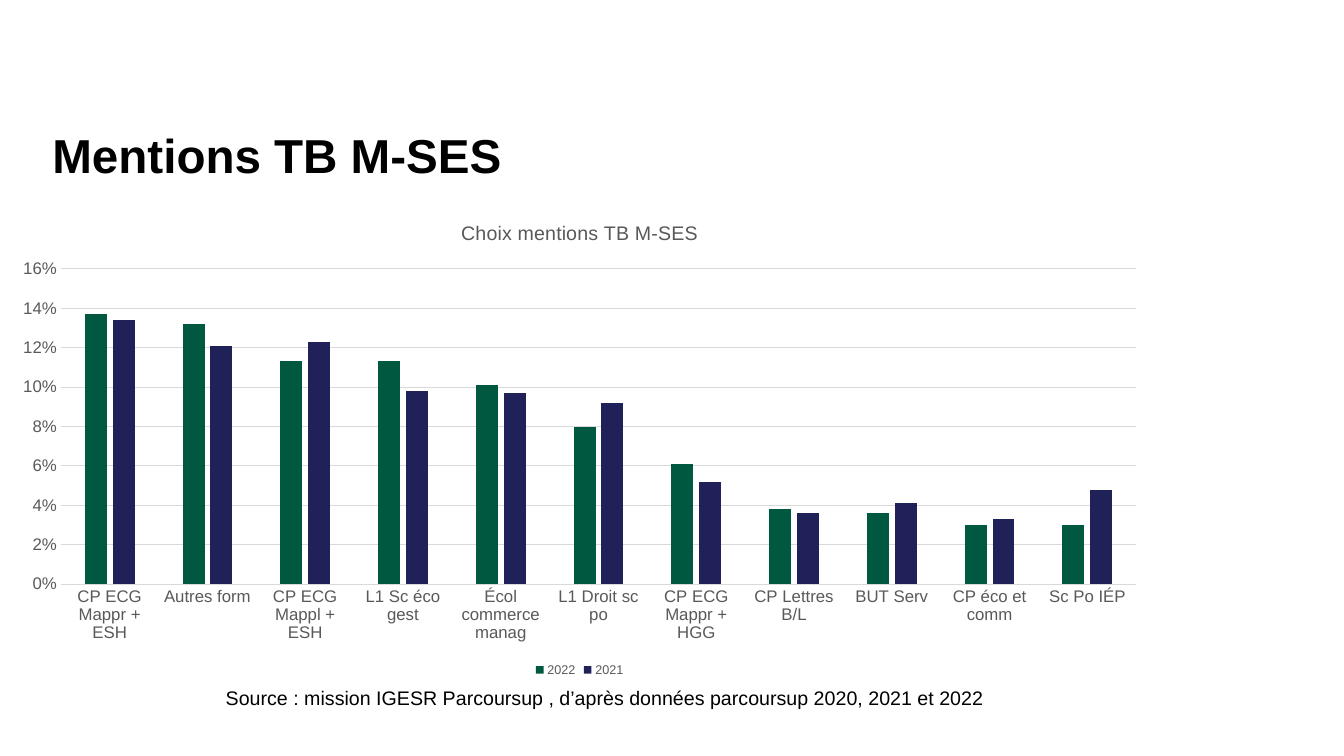
from dataclasses import dataclass

from pptx import Presentation
from pptx.chart.data import CategoryChartData
from pptx.dml.color import RGBColor
from pptx.enum.chart import XL_CHART_TYPE, XL_LEGEND_POSITION, XL_TICK_MARK
from pptx.util import Inches, Pt


@dataclass(frozen=True)
class Theme:
    """Colours, font and type sizes of the slide."""
    font: str = "Arial"
    ink: str = "000000"
    grey: str = "595959"
    rule: str = "D9D9D9"
    bars: tuple = ("005841", "21215A")
    title: int = 34
    body: int = 14
    axis: int = 12
    legend: int = 9


THEME = Theme()

CHOICES = [
    ("CP ECG Mappr + ESH", 0.137, 0.134),
    ("Autres form", 0.132, 0.121),
    ("CP ECG Mappl + ESH", 0.113, 0.123),
    ("L1 Sc éco gest", 0.113, 0.098),
    ("Écol commerce manag", 0.101, 0.097),
    ("L1 Droit sc po", 0.08, 0.092),
    ("CP ECG Mappr + HGG", 0.061, 0.052),
    ("CP Lettres B/L", 0.038, 0.036),
    ("BUT Serv", 0.036, 0.041),
    ("CP éco et comm", 0.03, 0.033),
    ("Sc Po IÉP", 0.03, 0.048),
]


def style(font, size, color, bold=False):
    """Set typeface, size, colour and weight of a font."""
    font.name = THEME.font
    font.size = Pt(size)
    font.bold = bold
    font.color.rgb = RGBColor.from_string(color)


def rule(line):
    """Draw a thin grey line."""
    line.color.rgb = RGBColor.from_string(THEME.rule)
    line.width = Pt(0.75)


def add_text(slide, text, box, size, bold=False, inset=(0.1, 0.05), lead=1.0):
    """Add one paragraph of text in a box."""
    frame = slide.shapes.add_textbox(*map(Inches, box)).text_frame
    frame.word_wrap = True
    frame.margin_left = frame.margin_right = Inches(inset[0])
    frame.margin_top = frame.margin_bottom = Inches(inset[1])
    para = frame.paragraphs[0]
    para.line_spacing = lead
    run = para.add_run()
    run.text = text
    style(run.font, size, THEME.ink, bold)


def set_axes(chart):
    """Format both axes and the grid."""
    for axis in (chart.category_axis, chart.value_axis):
        axis.major_tick_mark = axis.minor_tick_mark = XL_TICK_MARK.NONE
        style(axis.tick_labels.font, THEME.axis, THEME.grey)
    rule(chart.category_axis.format.line)
    scale = chart.value_axis
    scale.minimum_scale, scale.maximum_scale = 0, 0.16
    scale.major_unit = 0.02
    scale.format.line.fill.background()
    scale.tick_labels.number_format = "0%"
    scale.tick_labels.number_format_is_linked = False
    rule(scale.major_gridlines.format.line)


def add_bars(slide, title, years, rows, box):
    """Add a titled column chart with one series a year."""
    names, *values = zip(*rows)
    data = CategoryChartData(number_format="0.0%")
    data.categories = names
    for year, vals in zip(years, values):
        data.add_series(year, vals)
    chart = slide.shapes.add_chart(
        XL_CHART_TYPE.COLUMN_CLUSTERED, *map(Inches, box), data).chart
    style(chart.font, THEME.axis, THEME.grey)
    chart.has_title = True
    chart.chart_title.include_in_layout = False
    head = chart.chart_title.text_frame
    head.text = title
    style(head.paragraphs[0].runs[0].font, THEME.body, THEME.grey)
    chart.has_legend = True
    chart.legend.position = XL_LEGEND_POSITION.BOTTOM
    chart.legend.include_in_layout = False
    style(chart.legend.font, THEME.legend, THEME.grey)
    plot = chart.plots[0]
    plot.vary_by_categories = False
    plot.gap_width, plot.overlap = 219, -27
    for series, color in zip(plot.series, THEME.bars):
        series.invert_if_negative = False
        series.format.fill.solid()
        series.format.fill.fore_color.rgb = RGBColor.from_string(color)
    set_axes(chart)


def main():
    """Build and save the slide."""
    deck = Presentation()
    deck.slide_width, deck.slide_height = Inches(13.33), Inches(7.5)
    slide = deck.slides.add_slide(deck.slide_layouts[6])
    add_text(slide, "Mentions TB M-SES", (0.52, 1.31, 12.28, 1.05),
             THEME.title, bold=True, inset=(0, 0), lead=0.9)
    add_bars(slide, "Choix mentions TB M-SES", ("2022", "2021"), CHOICES,
             (0, 2, 11.5, 4.76))
    add_text(slide, "Source : mission IGESR Parcoursup , d’après données "
             "parcoursup 2020, 2021 et 2022", (2.14, 6.76, 7.82, 0.34),
             THEME.body)
    deck.save("out.pptx")


if __name__ == "__main__":
    main()
